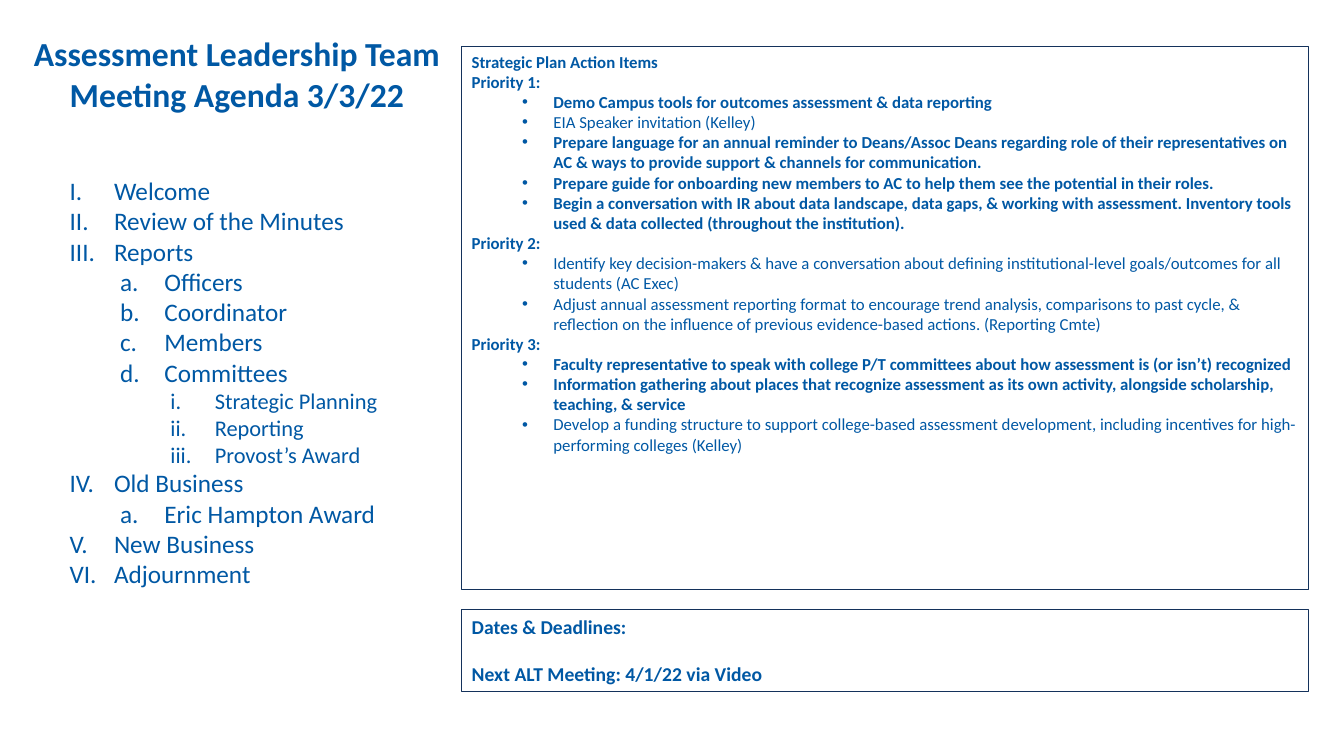
"""Build the assessment team's agenda slide."""
from lxml import etree
from pptx import Presentation
from pptx.dml.color import RGBColor
from pptx.enum.shapes import MSO_SHAPE
from pptx.enum.text import MSO_ANCHOR, MSO_AUTO_SIZE, PP_ALIGN
from pptx.oxml.ns import qn
from pptx.util import Inches, Pt

RECT = MSO_SHAPE.RECTANGLE
TOP = MSO_ANCHOR.TOP
FIXED = MSO_AUTO_SIZE.NONE
LEFT, MID = PP_ALIGN.LEFT, PP_ALIGN.CENTER
WIDE, HIGH = Inches(13.33), Inches(7.5)
BLUE, NAVY = "0058A4", "14325B"
MARKS = ("romanUcPeriod", "alphaLcPeriod", "romanLcPeriod")
SIZES = (18, 18, 16)

TITLE = ("Assessment Leadership Team", "Meeting Agenda 3/3/22")
AGENDA = (
    (0, "Welcome"), (0, "Review of the Minutes"), (0, "Reports"),
    (1, "Officers"), (1, "Coordinator"), (1, "Members"), (1, "Committees"),
    (2, "Strategic Planning"), (2, "Reporting"), (2, "Provost’s Award"),
    (0, "Old Business"), (1, "Eric Hampton Award"),
    (0, "New Business"), (0, "Adjournment"),
)
PLAN = (
    ("Priority 1:", (
        (True, "Demo Campus tools for outcomes assessment & data reporting"),
        (False, "EIA Speaker invitation (Kelley)"),
        (True, "Prepare language for an annual reminder to Deans/Assoc Deans "
               "regarding role of their representatives on AC & ways to "
               "provide support & channels for communication."),
        (True, "Prepare guide for onboarding new members to AC to help them "
               "see the potential in their roles."),
        (True, "Begin a conversation with IR about data landscape, data gaps, "
               "& working with assessment. Inventory tools used & data "
               "collected (throughout the institution)."),
    )),
    ("Priority 2:", (
        (False, "Identify key decision-makers & have a conversation about "
                "defining institutional-level goals/outcomes for all students "
                "(AC Exec)"),
        (False, "Adjust annual assessment reporting format to encourage trend "
                "analysis, comparisons to past cycle, & reflection on the "
                "influence of previous evidence-based actions. "
                "(Reporting Cmte)"),
    )),
    ("Priority 3:", (
        (True, "Faculty representative to speak with college P/T committees "
               "about how assessment is (or isn’t) recognized"),
        (True, "Information gathering about places that recognize assessment "
               "as its own activity, alongside scholarship, teaching, & "
               "service"),
        (False, "Develop a funding structure to support college-based "
                "assessment development, including incentives for "
                "high-performing colleges (Kelley)"),
    )),
)


def hue(code):
    """Turn a hex string into a colour."""
    return RGBColor.from_string(code)


def area(x, y, w, h):
    """Turn percentages of the slide into left, top, width and height."""
    return (round(WIDE * x / 100), round(HIGH * y / 100),
            round(WIDE * w / 100), round(HIGH * h / 100))


def mark(para, kind, level, start, hang):
    """Give a paragraph a bullet or a number with a hanging indent."""
    para.level = level
    props = para._p.get_or_add_pPr()
    props.set("marL", str(Inches(start)))
    props.set("indent", str(-Inches(hang)))
    if kind == "•":
        etree.SubElement(props, qn("a:buFont"), typeface="Arial")
        etree.SubElement(props, qn("a:buChar"), char=kind)
    else:
        etree.SubElement(props, qn("a:buFont"), typeface="+mj-lt")
        etree.SubElement(props, qn("a:buAutoNum"), type=kind)


def write(frame, text, size=12, bold=True, align=LEFT, gap=0):
    """Add one formatted paragraph to a frame and return it."""
    first = frame.paragraphs[0]
    para = frame.add_paragraph() if first.runs else first
    para.alignment = align
    para.space_before, para.space_after = Pt(gap), Pt(0)
    run = para.add_run()
    run.text = text
    font = run.font
    font.name, font.size, font.bold = "Calibri", Pt(size), bold
    font.color.rgb = hue(BLUE)
    return para


def setup(shape):
    """Make a shape's text wrap from the top and return its frame."""
    frame = shape.text_frame
    frame.word_wrap = True
    frame.auto_size = FIXED
    frame.vertical_anchor = TOP
    return frame


def hold(shape, spot):
    """Move a placeholder to a spot and return its frame."""
    shape.left, shape.top, shape.width, shape.height = spot
    return setup(shape)


def panel(slide, spot):
    """Draw an outlined box and return its frame."""
    box = slide.shapes.add_shape(RECT, *spot)
    box.shadow.inherit = False
    box.fill.background()
    box.line.color.rgb = hue(NAVY)
    box.line.width = Pt(0.75)
    return setup(box)


def agenda(frame):
    """Write the numbered agenda."""
    for level, text in AGENDA:
        para = write(frame, text, size=SIZES[level], bold=False)
        mark(para, MARKS[level], level, 0.44 + level / 2, 0.44)


def plan(frame):
    """Write the action items under their priorities."""
    write(frame, "Strategic Plan Action Items")
    for head, items in PLAN:
        write(frame, head)
        for bold, text in items:
            mark(write(frame, text, bold=bold), "•", 1, 0.81, 0.31)


def main():
    """Build and save the slide."""
    deck = Presentation()
    deck.slide_width, deck.slide_height = WIDE, HIGH
    slide = deck.slides.add_slide(deck.slide_layouts[1])
    agenda(hold(slide.placeholders[1], area(4.43, 22.53, 28.58, 57.87)))
    title = hold(slide.shapes.title, area(-0.9, 3.73, 37.06, 12.13))
    for line in TITLE:
        write(title, line, size=24, align=MID)
    plan(panel(slide, area(34.36, 6.13, 63.02, 71.87)))
    dates = panel(slide, area(34.36, 80.67, 63.02, 10.8))
    write(dates, "Dates & Deadlines:", size=14)
    write(dates, "Next ALT Meeting: 4/1/22 via Video", size=14, gap=17)
    deck.save("out.pptx")


if __name__ == "__main__":
    main()
